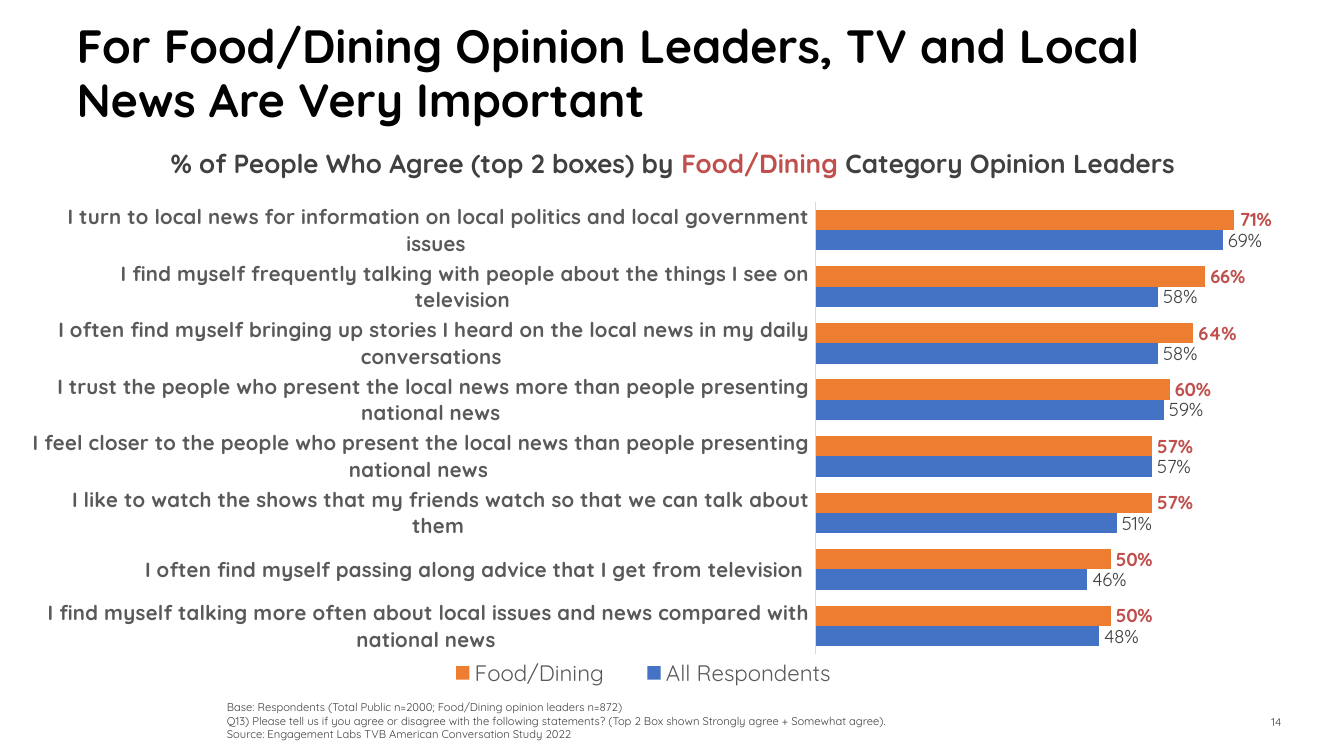
from lxml.etree import SubElement
from pptx import Presentation
from pptx.chart.data import CategoryChartData
from pptx.dml.color import RGBColor
from pptx.enum.chart import XL_CHART_TYPE, XL_LABEL_POSITION, XL_LEGEND_POSITION, XL_TICK_MARK
from pptx.enum.text import MSO_ANCHOR, PP_ALIGN
from pptx.oxml.ns import qn
from pptx.util import Pt

THEME = {
    "font": "Quicksand",
    "title": (25, "000000", True),
    "heading": (14, "404040", True),
    "note": (6, "404040", False),
    "number": (6, "3C3C3A", False),
    "chart": (10, "000000", False),
    "category": (11, "595959", True),
    "legend": (12, "595959", False),
    "respondents_label": (10, "404040", False),
    "dining_label": (10, "C0504D", True),
    "accent": "C0504D",
    "axis": "D9D9D9",
    "respondents": "4472C4",
    "dining": "ED7D31",
}

TITLE = "For Food/Dining Opinion Leaders, TV and Local News Are Very Important"
HEADING = [
    ("% of People Who Agree (top 2 boxes) by ", None),
    ("Food/Dining ", "accent"),
    ("Category Opinion Leaders", None),
]
NOTES = [
    "Base: Respondents (Total Public n=2000; Food/Dining opinion leaders n=872)",
    "Q13) Please tell us if you agree or disagree with the following statements? "
    "(Top 2 Box shown Strongly agree + Somewhat agree).",
    "Source: Engagement Labs TVB American Conversation Study 2022",
]
SERIES = [("All Respondents", "respondents"), ("Food/Dining", "dining")]
STATEMENTS = [
    ("I find myself talking more often about local issues and news compared with national news ", 0.48, 0.50),
    ("I often find myself passing along advice that I get from television ", 0.46, 0.50),
    ("I like to watch the shows that my friends watch so that we can talk about them ", 0.51, 0.57),
    ("I feel closer to the people who present the local news than people presenting national news ", 0.57, 0.57),
    ("I trust the people who present the local news more than people presenting national news ", 0.59, 0.60),
    ("I often find myself bringing up stories I heard on the local news in my daily conversations ", 0.58, 0.64),
    ("I find myself frequently talking with people about the things I see on television ", 0.58, 0.66),
    ("I turn to local news for information on local politics and local government issues ", 0.69, 0.71),
]


def style(font, role):
    size, color, bold = THEME[role]
    font.name = THEME["font"]
    font.size = Pt(size)
    font.bold = bold
    font.color.rgb = RGBColor.from_string(color)


def add_text(slide, box, paragraphs, role, align=PP_ALIGN.LEFT, anchor=MSO_ANCHOR.TOP, wrap=True):
    frame = slide.shapes.add_textbox(*map(Pt, box)).text_frame
    frame.word_wrap = wrap
    frame.vertical_anchor = anchor
    for index, runs in enumerate(paragraphs):
        paragraph = frame.add_paragraph() if index else frame.paragraphs[0]
        paragraph.alignment = align
        style(paragraph.font, role)
        for text, color in runs:
            run = paragraph.add_run()
            run.text = text
            if color:
                run.font.color.rgb = RGBColor.from_string(THEME[color])
    return frame


def place(layout, **values):
    for old in list(layout):
        layout.remove(old)
    manual = SubElement(layout, qn("c:manualLayout"))
    for tag, value in values.items():
        SubElement(manual, qn(f"c:{tag}")).set("val", str(value))


def add_agreement_chart(slide, box):
    data = CategoryChartData(number_format="0%")
    data.categories = [statement[0] for statement in STATEMENTS]
    for column, (name, _) in enumerate(SERIES, 1):
        data.add_series(name, [statement[column] for statement in STATEMENTS])
    chart = slide.shapes.add_chart(XL_CHART_TYPE.BAR_CLUSTERED, *map(Pt, box), data).chart
    chart.has_title = False
    style(chart.font, "chart")

    plot = chart.plots[0]
    plot.gap_width = 78
    plot.overlap = 0
    plot.vary_by_categories = False
    for series, (_, role) in zip(plot.series, SERIES):
        series.format.fill.solid()
        series.format.fill.fore_color.rgb = RGBColor.from_string(THEME[role])
        labels = series.data_labels
        labels.show_value = True
        labels.number_format = "0%"
        labels.number_format_is_linked = False
        labels.position = XL_LABEL_POSITION.OUTSIDE_END
        style(labels.font, f"{role}_label")

    statements = chart.category_axis
    statements.major_tick_mark = XL_TICK_MARK.NONE
    statements.format.line.color.rgb = RGBColor.from_string(THEME["axis"])
    statements.format.line.width = Pt(0.75)
    style(statements.tick_labels.font, "category")
    share = chart.value_axis
    share.visible = False
    share.has_major_gridlines = False
    share.minimum_scale = 0
    share.maximum_scale = 0.8

    chart.has_legend = True
    legend = chart.legend
    legend.position = XL_LEGEND_POSITION.BOTTOM
    legend.include_in_layout = False
    style(legend.font, "legend")

    area = plot._element.getparent()
    layout = area.find(qn("c:layout"))
    if layout is None:
        layout = SubElement(area, qn("c:layout"))
        area.insert(0, layout)
    place(layout, layoutTarget="inner", xMode="edge", yMode="edge", x=0.61, y=0.02, w=0.37, h=0.86)
    legend_layout = legend._element.find(qn("c:layout"))
    if legend_layout is None:
        legend_layout = SubElement(legend._element, qn("c:layout"))
        legend._element.find(qn("c:legendPos")).addnext(legend_layout)
    place(legend_layout, xMode="edge", yMode="edge", x=0.3, y=0.88, w=0.35, h=0.07)


def main():
    deck = Presentation()
    deck.slide_width, deck.slide_height = Pt(720), Pt(405)
    slide = deck.slides.add_slide(deck.slide_layouts[6])

    add_text(slide, (651, 376, 42.5, 21.5), [[("14", None)]], "number", PP_ALIGN.RIGHT, MSO_ANCHOR.MIDDLE)
    title = add_text(slide, (34, 11, 649.5, 57), [[(TITLE, None)]], "title")
    title.margin_top = 0
    title.paragraphs[0].line_spacing = 0.96
    add_text(slide, (114.5, 371.5, 586, 29), [[(note, None)] for note in NOTES], "note", anchor=MSO_ANCHOR.BOTTOM)
    add_text(slide, (80, 75.5, 561, 24.5), [HEADING], "heading", PP_ALIGN.CENTER, wrap=False)
    add_agreement_chart(slide, (17.5, 102.5, 686, 282))
    deck.save("out.pptx")


if __name__ == "__main__":
    main()
